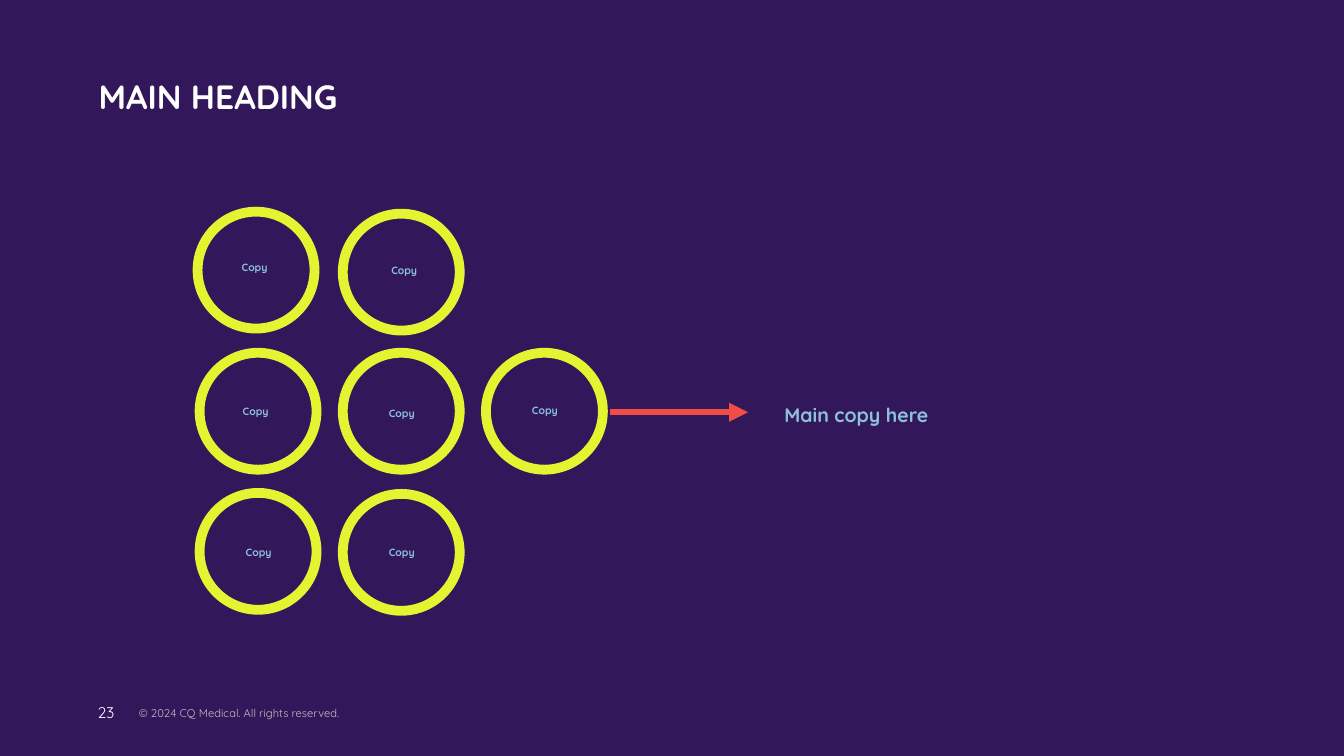
from lxml import etree
from pptx import Presentation
from pptx.dml.color import RGBColor
from pptx.enum.shapes import MSO_CONNECTOR, MSO_SHAPE
from pptx.enum.text import MSO_ANCHOR, PP_ALIGN
from pptx.oxml.ns import qn
from pptx.util import Pt

PX = 9144
FONT = "Quicksand"
PURPLE = RGBColor(0x32, 0x18, 0x5B)
WHITE = RGBColor(0xFF, 0xFF, 0xFF)
GREY = RGBColor(0xBF, 0xBF, 0xBF)
SKY = RGBColor(0x8D, 0xC1, 0xDB)
LIME = RGBColor(0xE4, 0xF4, 0x31)
RED = RGBColor(0xF0, 0x4D, 0x46)

OVAL = MSO_SHAPE.OVAL
STRAIGHT = MSO_CONNECTOR.STRAIGHT
TOP, MIDDLE = MSO_ANCHOR.TOP, MSO_ANCHOR.MIDDLE
LEFT, CENTER = PP_ALIGN.LEFT, PP_ALIGN.CENTER

RING = 116
RINGS = [
    ((0, 0), (12, 42, 89, 26)),
    ((2, 140), (11, 45, 89, 26)),
    ((2, 279), (9, 27, 99, 64)),
    ((144, 2), (6, 31, 110, 51)),
    ((144, 140), (6, 22, 105, 77)),
    ((144, 280), (6, 38, 105, 39)),
    ((286, 140), (14, 44, 89, 26)),
]


def px(*sizes):
    return [size * PX for size in sizes]


def add_text(slide, box, text, size, color, bold=False,
             align=LEFT, anchor=TOP, inset=(0, 0)):
    frame = slide.shapes.add_textbox(*px(*box)).text_frame
    frame.word_wrap = True
    frame.vertical_anchor = anchor
    frame.margin_left = frame.margin_right = inset[0] * PX
    frame.margin_top = frame.margin_bottom = inset[1] * PX
    para = frame.paragraphs[0]
    para.alignment = align
    run = para.add_run()
    run.text = text
    run.font.name = FONT
    run.font.size = Pt(size)
    run.font.bold = bold
    run.font.color.rgb = color


def add_head(slide, box):
    add_text(slide, box, "MAIN HEADING", 24, WHITE, True, inset=(10, 5))


def add_foot(slide, box):
    x, y, w, h = box
    add_text(slide, (x, y, 67, 40), "23", 11, WHITE, inset=(10, 5))
    add_text(slide, (x + 41, y + 3, w - 41, h - 3),
             "© 2024 CQ Medical. All rights reserved.", 8, GREY, inset=(10, 5))


def add_ring(slide, x, y, label):
    ring = slide.shapes.add_shape(OVAL, *px(x, y, RING, RING))
    ring.shadow.inherit = False
    ring.fill.background()
    ring.line.color.rgb = LIME
    ring.line.width = Pt(7)
    dx, dy, w, h = label
    add_text(slide, (x + dx, y + dy, w, h), "Copy", 7.5, SKY, True,
             CENTER, MIDDLE)


def add_rings(slide, box):
    x, y = box[:2]
    for (dx, dy), label in RINGS:
        add_ring(slide, x + dx, y + dy, label)


def add_arrow(slide, box):
    x, y, w, h = box
    arrow = slide.shapes.add_connector(STRAIGHT, *px(x, y, x + w, y + h))
    arrow.line.color.rgb = RED
    arrow.line.width = Pt(4.5)
    etree.SubElement(arrow.line._get_or_add_ln(), qn("a:tailEnd"),
                     type="triangle")
    etree.SubElement(arrow._element.spPr, qn("a:effectLst"))


def add_main(slide, box):
    x, y, w, h = box
    add_arrow(slide, (x, y + 86, 137, 0))
    add_text(slide, (x + 173, y, w - 173, h), "Main copy here", 14, SKY,
             True, anchor=MIDDLE)


def main():
    deck = Presentation()
    deck.slide_width, deck.slide_height = px(1333, 750)
    slide = deck.slides.add_slide(deck.slide_layouts[6])
    back = slide.background.fill
    back.solid()
    back.fore_color.rgb = PURPLE
    add_head(slide, (88, 70, 1064, 127))
    add_main(slide, (605, 323, 670, 176))
    add_rings(slide, (196, 210, 402, 396))
    add_foot(slide, (87, 693, 928, 57))
    deck.save("out.pptx")


if __name__ == "__main__":
    main()
